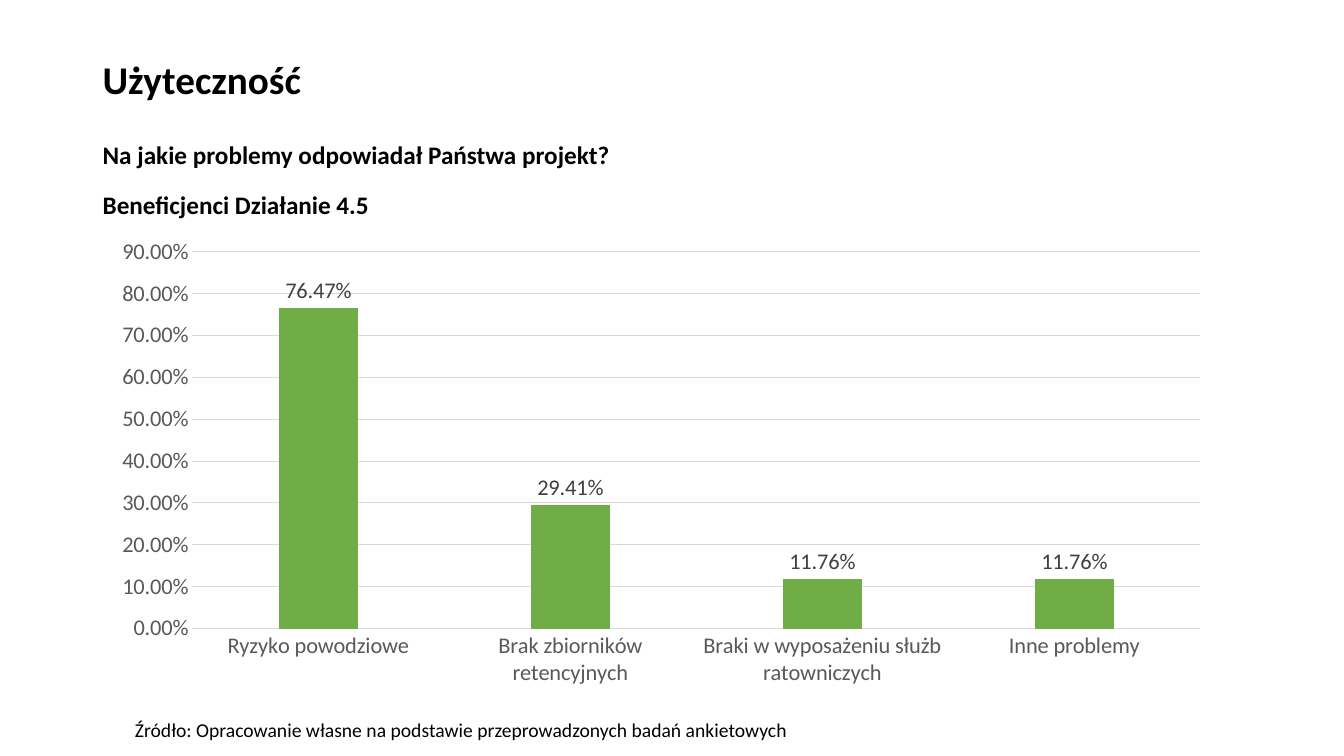
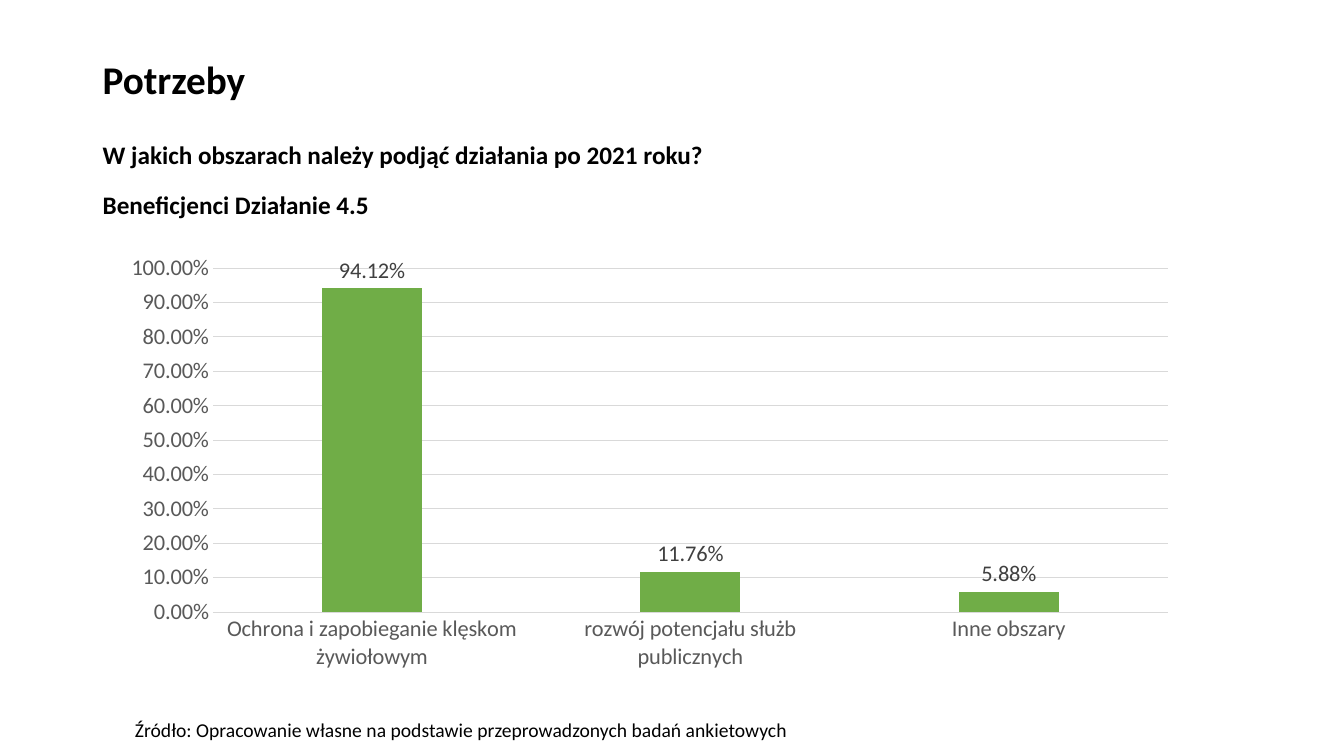
"""Build two survey slides, each with a heading, a column chart and a source line."""
from dataclasses import dataclass

from pptx import Presentation
from pptx.chart.data import CategoryChartData
from pptx.dml.color import RGBColor
from pptx.enum.chart import XL_CHART_TYPE, XL_LABEL_POSITION, XL_TICK_MARK
from pptx.enum.text import MSO_ANCHOR, PP_ALIGN
from pptx.util import Inches, Pt


@dataclass(frozen=True)
class Theme:
    """Hold the colours, font and type sizes of the deck."""
    font: str = "Calibri"
    ink: str = "000000"
    axis: str = "595959"
    label: str = "404040"
    grid: str = "D9D9D9"
    bar: str = "70AD47"
    title: int = 28
    heading: int = 18
    chart: int = 16
    source: int = 14


THEME = Theme()
WIDTH, HEIGHT = Inches(13.333), Inches(7.5)
LEFT, SPAN = 6.9, 86.25
PERCENT = "0.00%"
GROUP = "Beneficjenci Działanie 4.5"
SOURCE = "Źródło: Opracowanie własne na podstawie przeprowadzonych badań ankietowych"

TIGHT = {"line_spacing": 0.9, "space_before": Pt(10)}
QUESTION = {"alignment": PP_ALIGN.JUSTIFY, "line_spacing": 1.15,
            "space_before": Pt(4), "space_after": Pt(4)}

SLIDES = [
    {
        "title": "Użyteczność",
        "question": "Na jakie problemy odpowiadał Państwa projekt?",
        "at": (7.43, 30.27, 83.55, 61.87),
        "top": 0.9,
        "values": {
            "Ryzyko powodziowe": 0.7647,
            "Brak zbiorników retencyjnych": 0.2941,
            "Braki w wyposażeniu służb ratowniczych": 0.1176,
            "Inne problemy": 0.1176,
        },
    },
    {
        "title": "Potrzeby",
        "question": "W jakich obszarach należy podjąć działania po 2021 roku?",
        "at": (8.18, 32.53, 80.33, 57.33),
        "top": 1.0,
        "values": {
            "Ochrona i zapobieganie klęskom żywiołowym": 0.9412,
            "rozwój potencjału służb publicznych": 0.1176,
            "Inne obszary": 0.0588,
        },
    },
]


def apply(target, values):
    """Set each attribute named in a dict of format values."""
    for name, value in values.items():
        setattr(target, name, value)


def place(left, top, width, height):
    """Turn percentages of the slide into lengths."""
    return [int(share / 100 * side) for share, side in
            zip((left, top, width, height), (WIDTH, HEIGHT) * 2)]


def style_font(font, size, colour, bold=False):
    """Give a font the deck's typeface with a size and colour."""
    apply(font, {"name": THEME.font, "size": Pt(size), "bold": bold})
    font.color.rgb = RGBColor.from_string(colour)


def style_line(line):
    """Draw a chart line in the thin grid style."""
    line.width = Pt(0.75)
    line.color.rgb = RGBColor.from_string(THEME.grid)


def add_text(s, text, at, size, layout, bold=True, anchor=MSO_ANCHOR.TOP):
    """Add one wrapped paragraph."""
    tf = s.shapes.add_textbox(*place(*at)).text_frame
    apply(tf, {"word_wrap": True, "vertical_anchor": anchor})
    p = tf.paragraphs[0]
    apply(p, layout)
    r = p.add_run()
    r.text = text
    style_font(r.font, size, THEME.ink, bold)


def add_columns(s, at, values, top):
    """Add a labelled column chart of percentages."""
    data = CategoryChartData(number_format=PERCENT)
    data.categories = list(values)
    data.add_series("Series 1", list(values.values()))
    chart = s.shapes.add_chart(
        XL_CHART_TYPE.COLUMN_CLUSTERED, *place(*at), data).chart
    apply(chart, {"has_legend": False, "has_title": False})
    style_font(chart.font, THEME.chart, THEME.ink)

    plot = chart.plots[0]
    apply(plot, {"gap_width": 219, "overlap": -27,
                 "vary_by_categories": False, "has_data_labels": True})
    fill = plot.series[0].format.fill
    fill.solid()
    fill.fore_color.rgb = RGBColor.from_string(THEME.bar)
    labels = plot.data_labels
    apply(labels, {"show_value": True, "number_format": PERCENT,
                   "number_format_is_linked": False,
                   "position": XL_LABEL_POSITION.OUTSIDE_END})
    style_font(labels.font, THEME.chart, THEME.label)

    for axis in (chart.category_axis, chart.value_axis):
        apply(axis, {"major_tick_mark": XL_TICK_MARK.NONE,
                     "minor_tick_mark": XL_TICK_MARK.NONE})
        style_font(axis.tick_labels.font, THEME.chart, THEME.axis)
    style_line(chart.category_axis.format.line)
    axis = chart.value_axis
    apply(axis, {"minimum_scale": 0, "maximum_scale": top,
                 "major_unit": 0.1, "has_major_gridlines": True})
    apply(axis.tick_labels, {"number_format": PERCENT,
                             "number_format_is_linked": False})
    axis.format.line.fill.background()
    style_line(axis.major_gridlines.format.line)


def add_survey_slide(prs, title, question, at, top, values):
    """Add a slide with its headings, chart and source."""
    s = prs.slides.add_slide(prs.slide_layouts[6])
    add_text(s, title, (LEFT, 5.33, SPAN, 11.07), THEME.title,
             {"line_spacing": 0.9}, anchor=MSO_ANCHOR.MIDDLE)
    add_text(s, question, (LEFT, 17.2, SPAN, 7.6), THEME.heading, QUESTION)
    add_text(s, GROUP, (LEFT, 24.8, SPAN, 7.6), THEME.heading, TIGHT)
    add_columns(s, at, values, top)
    add_text(s, SOURCE, (9.3, 94.67, SPAN, 5.33), THEME.source, TIGHT,
             bold=False)


def main():
    """Build and save the deck."""
    prs = Presentation()
    apply(prs, {"slide_width": WIDTH, "slide_height": HEIGHT})
    for content in SLIDES:
        add_survey_slide(prs, **content)
    prs.save("out.pptx")


if __name__ == "__main__":
    main()
